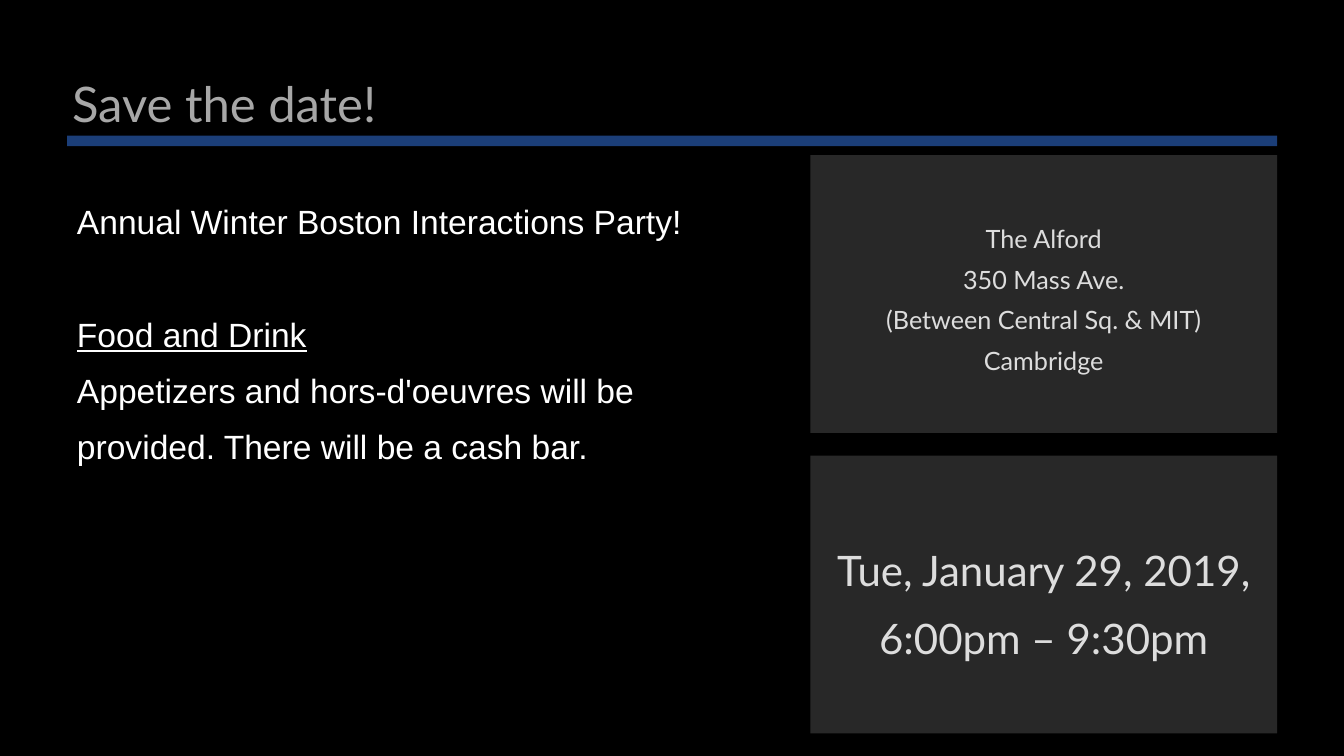
from pptx import Presentation
from pptx.dml.color import RGBColor
from pptx.enum.shapes import MSO_SHAPE
from pptx.enum.text import MSO_ANCHOR, MSO_AUTO_SIZE, PP_ALIGN
from pptx.util import Cm, Pt

LEFT, WIDTH = 3.38, 60.99
CARD_WIDTH, CARD_HEIGHT = 23.53, 14
CARD_LEFT = LEFT + WIDTH - CARD_WIDTH
CARD_TOP, CARD_PITCH = 7.82, 15.14


def color(value):
    return RGBColor.from_string(value)


class InvitationSlide:
    heading_font, body_font = "Lato", "Arial"
    background, accent, panel = "000000", "1B3E78", "282828"
    title_text, body_text, card_text = "A7A7A7", "FFFFFF", "DDDDDD"

    def __init__(self, presentation):
        self.slide = presentation.slides.add_slide(presentation.slide_layouts[5])
        fill = self.slide.background.fill
        fill.solid()
        fill.fore_color.rgb = color(self.background)

    def set_text(self, frame, lines, font, size, text_color, align, spacing, inset, anchor):
        """Fill a text frame with one paragraph per line and return the paragraphs."""
        frame.word_wrap = True
        frame.auto_size = MSO_AUTO_SIZE.NONE
        frame.vertical_anchor = anchor
        frame.margin_left = frame.margin_right = Cm(inset)
        frame.margin_top = frame.margin_bottom = Cm(inset)
        frame.text = "\n".join(lines)
        for paragraph in frame.paragraphs:
            paragraph.alignment = align
            paragraph.line_spacing = spacing
            paragraph.font.name = font
            paragraph.font.size = Pt(size)
            paragraph.font.color.rgb = color(text_color)
        return frame.paragraphs

    def title(self, text, top, height):
        shape = self.slide.shapes.title
        shape.left, shape.top = Cm(LEFT), Cm(top)
        shape.width, shape.height = Cm(WIDTH), Cm(height)
        self.set_text(shape.text_frame, [text], self.heading_font, 70, self.title_text,
                      PP_ALIGN.LEFT, 1.0, 0.25, MSO_ANCHOR.MIDDLE)

    def rectangle(self, left, top, width, height, fill_color):
        shape = self.slide.shapes.add_shape(
            MSO_SHAPE.RECTANGLE, Cm(left), Cm(top), Cm(width), Cm(height))
        shape.shadow.inherit = False
        shape.fill.solid()
        shape.fill.fore_color.rgb = color(fill_color)
        shape.line.fill.background()
        return shape

    def card(self, row, lines, size):
        shape = self.rectangle(CARD_LEFT, CARD_TOP + row * CARD_PITCH,
                               CARD_WIDTH, CARD_HEIGHT, self.panel)
        self.set_text(shape.text_frame, lines, self.heading_font, size, self.card_text,
                      PP_ALIGN.CENTER, 1.35, 0, MSO_ANCHOR.MIDDLE)

    def body(self, lines, left, top, width, height):
        box = self.slide.shapes.add_textbox(Cm(left), Cm(top), Cm(width), Cm(height))
        return self.set_text(box.text_frame, lines, self.body_font, 48, self.body_text,
                             PP_ALIGN.LEFT, 1.4, 0.25, MSO_ANCHOR.TOP)


def main():
    presentation = Presentation()
    presentation.slide_width, presentation.slide_height = Cm(67.74), Cm(38.1)

    invitation = InvitationSlide(presentation)
    invitation.title("Save the date!", 3.2, 3.94)
    invitation.rectangle(LEFT, 6.83, WIDTH, 0.53, invitation.accent)

    announcement, subheading, details = invitation.body([
        "Annual Winter Boston Interactions Party!",
        "Food and Drink",
        "Appetizers and hors-d'oeuvres will be provided. There will be a cash bar.",
    ], 3.63, 9.07, 35.05, 23.95)
    subheading.font.underline = True
    subheading.space_before = Pt(80)

    invitation.card(0, ["The Alford", "350 Mass Ave.",
                        "(Between Central Sq. & MIT)", "Cambridge"], 36)
    invitation.card(1, ["Tue, January 29, 2019, 6:00pm – 9:30pm"], 60)

    presentation.save("out.pptx")


if __name__ == "__main__":
    main()
